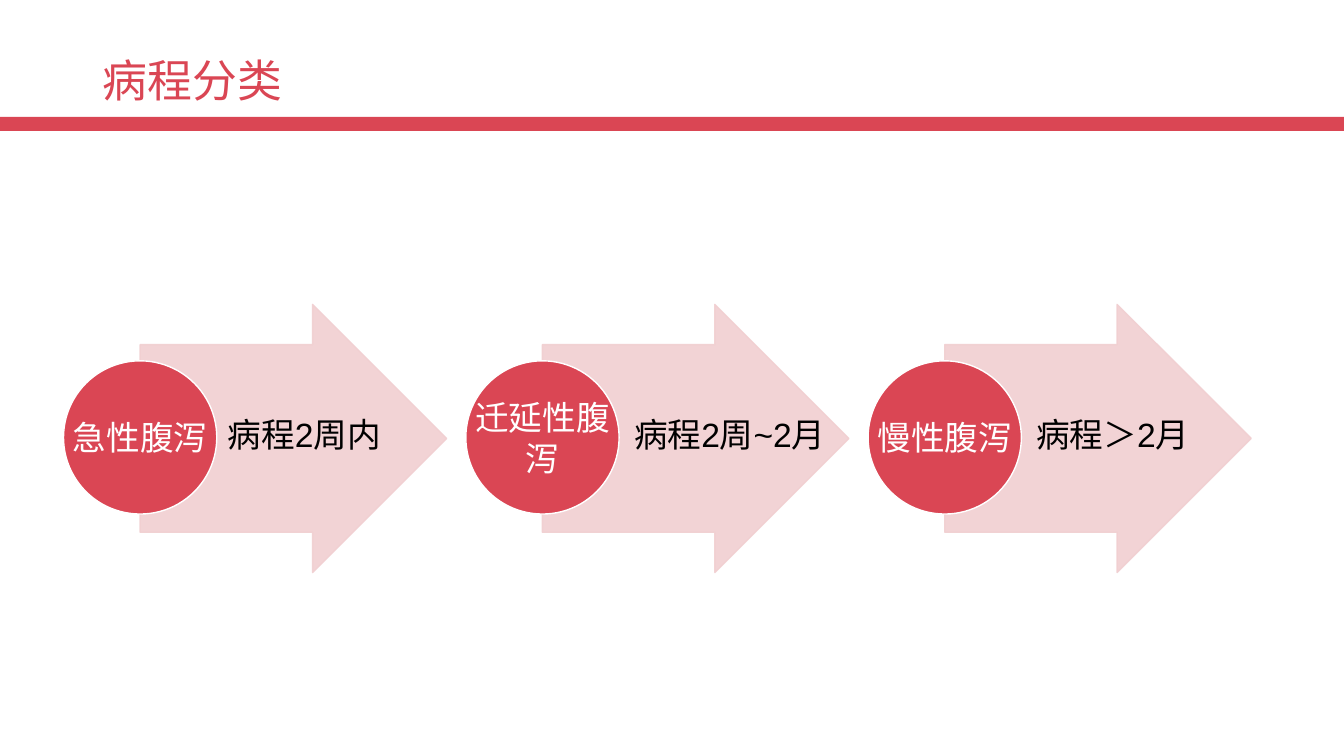
from lxml.etree import SubElement
from pptx import Presentation
from pptx.dml.color import RGBColor
from pptx.enum.shapes import MSO_SHAPE as Shape
from pptx.enum.text import MSO_ANCHOR as Anchor, PP_ALIGN as Align
from pptx.oxml.ns import qn
from pptx.util import Emu, Pt

RED, PINK, WHITE, BLACK = "DA4654", "F1CFD1", "FFFFFF", "000000"
STEP, TOP = 399, 302
STAGES = [("急性腹泻", "病程2周内", 216, 207),
          ("迁延性腹泻", "病程2周~2月", 619, 221),
          ("慢性腹泻", "病程＞2月", 1018, 199)]


def px(*lengths):
    return [Emu(length * 9144) for length in lengths]


def colour(value):
    return RGBColor.from_string(value)


class SlideBuilder:
    """Draws styled elements on one page, with lengths in hundredths of an inch."""

    def __init__(self, deck):
        self.page = deck.slides.add_slide(deck.slide_layouts[6])
        self.font = "Arial"

    def shape(self, kind, place, fill, line=None, adjust=(), alpha=None):
        shape = self.page.shapes.add_shape(kind, *px(*place))
        shape.shadow.inherit = False
        for index, value in enumerate(adjust):
            shape.adjustments[index] = value
        shape.fill.solid()
        shape.fill.fore_color.rgb = colour(fill)
        if line:
            shape.line.color.rgb = colour(line)
            shape.line.width = Pt(1)
        else:
            shape.line.fill.background()
        if alpha:
            for tint in shape.element.spPr.iter(qn("a:srgbClr")):
                SubElement(tint, qn("a:alpha"), val=str(alpha * 1000))

    def text(self, words, place, size=24, ink=BLACK, spacing=None,
             align=Align.LEFT, **frame_format):
        frame = self.page.shapes.add_textbox(*px(*place)).text_frame
        for name, value in {"word_wrap": True, **frame_format}.items():
            setattr(frame, name, value)
        para = frame.paragraphs[0]
        para.alignment = align
        if spacing:
            para.line_spacing = spacing
        span = para.add_run()
        span.text = words
        for name, value in {"name": self.font, "size": Pt(size)}.items():
            setattr(span.font, name, value)
        span.font.color.rgb = colour(ink)

    def stage(self, left, name):
        circle = (left, TOP + 56, 152, 152)
        self.shape(Shape.RIGHT_ARROW, (left + 76, TOP, 304, 266), PINK, PINK,
                   adjust=(0.7, 0.5), alpha=90)
        self.shape(Shape.OVAL, circle, RED, WHITE)
        margins = {f"margin_{side}": px(2)[0]
                   for side in ("left", "top", "right", "bottom")}
        self.text(name, circle, ink=WHITE, align=Align.CENTER,
                  vertical_anchor=Anchor.MIDDLE, **margins)


def main():
    deck = Presentation()
    deck.slide_width, deck.slide_height = px(1333, 750)
    slide = SlideBuilder(deck)
    slide.shape(Shape.RECTANGLE, (0, 116, 1333, 14), RED)
    slide.text("病程分类", (92, 44, 1150, 76), size=32, ink=RED, spacing=0.9,
               vertical_anchor=Anchor.MIDDLE)
    for index, (name, duration, left, width) in enumerate(STAGES):
        slide.stage(63 + index * STEP, name)
        slide.text(duration, (left, 406, width, 50))
    deck.save("out.pptx")


if __name__ == "__main__":
    main()
